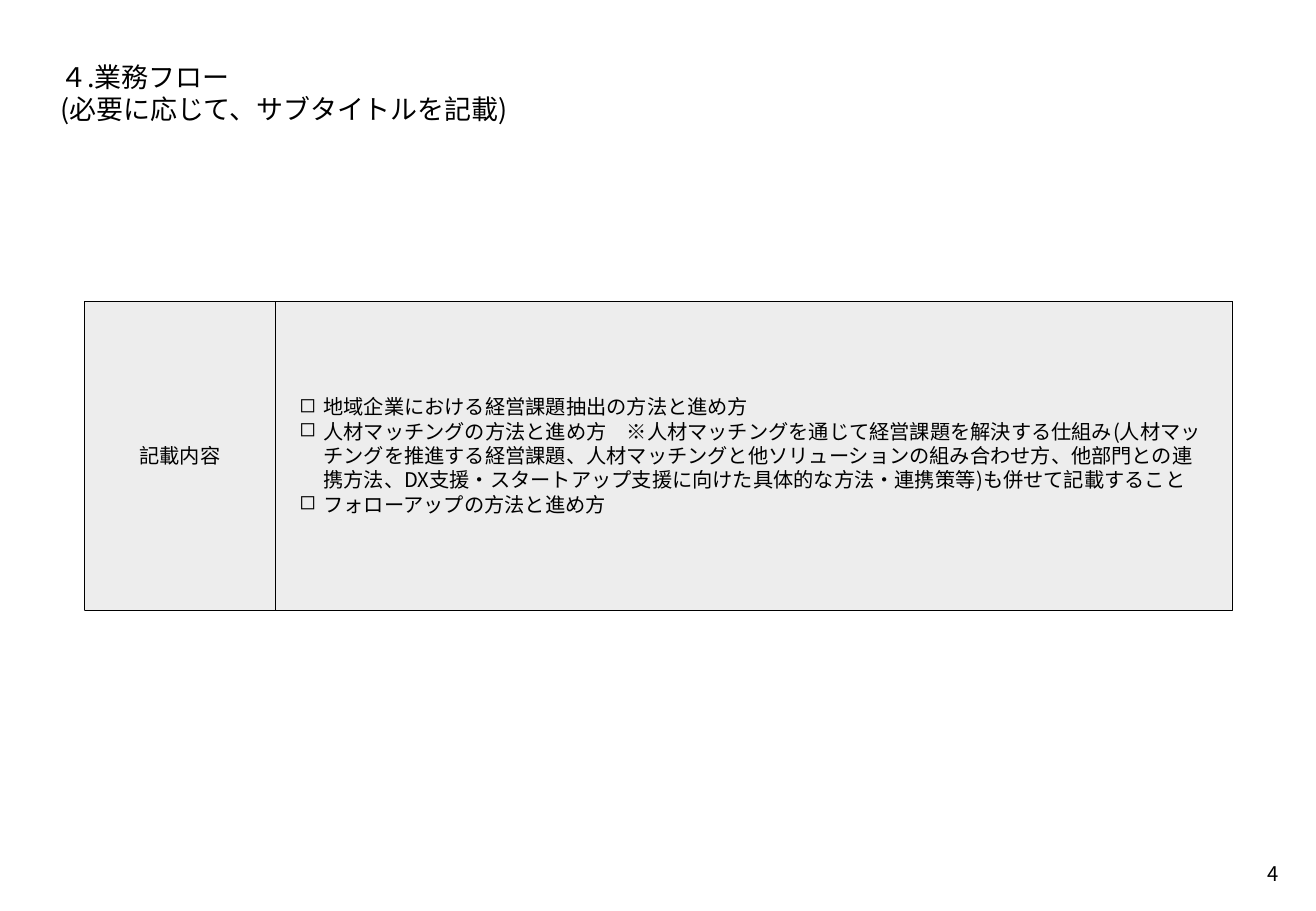
from pptx import Presentation
from pptx.dml.color import RGBColor
from pptx.enum.dml import MSO_LINE
from pptx.enum.shapes import MSO_SHAPE
from pptx.enum.text import MSO_ANCHOR, PP_ALIGN
from pptx.oxml.ns import qn
from pptx.util import Pt
from lxml import etree

FONT = "Noto Sans CJK JP"
BLACK = RGBColor(0x00, 0x00, 0x00)
PANEL_GREY = RGBColor(0xED, 0xED, 0xED)
RECTANGLE = MSO_SHAPE.RECTANGLE
DOTTED = MSO_LINE.ROUND_DOT
TOP, MIDDLE = MSO_ANCHOR.TOP, MSO_ANCHOR.MIDDLE
LEFT, CENTER, RIGHT = PP_ALIGN.LEFT, PP_ALIGN.CENTER, PP_ALIGN.RIGHT

PANEL_LEFT, PANEL_TOP, PANEL_HEIGHT = 50, 178.5, 183
LABEL_WIDTH, DETAILS_WIDTH = 113.3, 566.8
BULLET_INDENT = 14.2


def write(shape, paragraphs, size, align, anchor, inset, wrap=True):
    frame = shape.text_frame
    frame.word_wrap = wrap
    frame.vertical_anchor = anchor
    frame.margin_left = frame.margin_right = Pt(inset)
    frame.margin_top = frame.margin_bottom = Pt(inset)
    for index, text in enumerate(paragraphs):
        paragraph = frame.add_paragraph() if index else frame.paragraphs[0]
        paragraph.text = text
        paragraph.alignment = align
        font = paragraph.font
        font.name = FONT
        font.size = Pt(size)
        font.color.rgb = BLACK
        # East Asian typeface
        defaults = paragraph._p.pPr.find(qn("a:defRPr"))
        etree.SubElement(defaults, qn("a:ea"), typeface=FONT)


def add_panel(left, width):
    panel = slide.shapes.add_shape(
        RECTANGLE, Pt(left), Pt(PANEL_TOP), Pt(width), Pt(PANEL_HEIGHT))
    panel.shadow.inherit = False
    panel.fill.solid()
    panel.fill.fore_color.rgb = PANEL_GREY
    panel.line.color.rgb = BLACK
    panel.line.width = Pt(0.25)
    panel.line.dash_style = DOTTED
    return panel


prs = Presentation()
prs.slide_width, prs.slide_height = Pt(780), Pt(540)
slide = prs.slides.add_slide(prs.slide_layouts[6])

# Title and subtitle
title = slide.shapes.add_textbox(Pt(21.6), Pt(21.6), Pt(737), Pt(57))
write(title, ["４.業務フロー\v(必要に応じて、サブタイトルを記載)"], 16, LEFT, TOP, 14.2)

# Page number
page_number = slide.shapes.add_textbox(Pt(737.3), Pt(503.3), Pt(28), Pt(28))
write(page_number, ["4"], 12, RIGHT, TOP, 7.2, wrap=False)

# Details panel with its checklist
details = add_panel(PANEL_LEFT + LABEL_WIDTH, DETAILS_WIDTH)
checklist = [
    "地域企業における経営課題抽出の方法と進め方",
    "人材マッチングの方法と進め方　※人材マッチングを通じて経営課題を解決する仕組み"
    "(人材マッチングを推進する経営課題、人材マッチングと他ソリューションの組み合わせ方、"
    "他部門との連携方法、DX支援・スタートアップ支援に向けた具体的な方法・連携策等)"
    "も併せて記載すること",
    "フォローアップの方法と進め方",
]
write(details, checklist, 12, LEFT, MIDDLE, 14.2)
for item in details.text_frame.paragraphs:
    properties = item._p.pPr
    properties.set("marL", str(Pt(BULLET_INDENT)))
    properties.set("indent", str(-Pt(BULLET_INDENT)))
    bullet = etree.Element(qn("a:buChar"), char="◻")
    properties.find(qn("a:defRPr")).addprevious(bullet)

# Label panel
label = add_panel(PANEL_LEFT, LABEL_WIDTH)
write(label, ["記載内容"], 12, CENTER, MIDDLE, 7.2)

prs.save("out.pptx")
